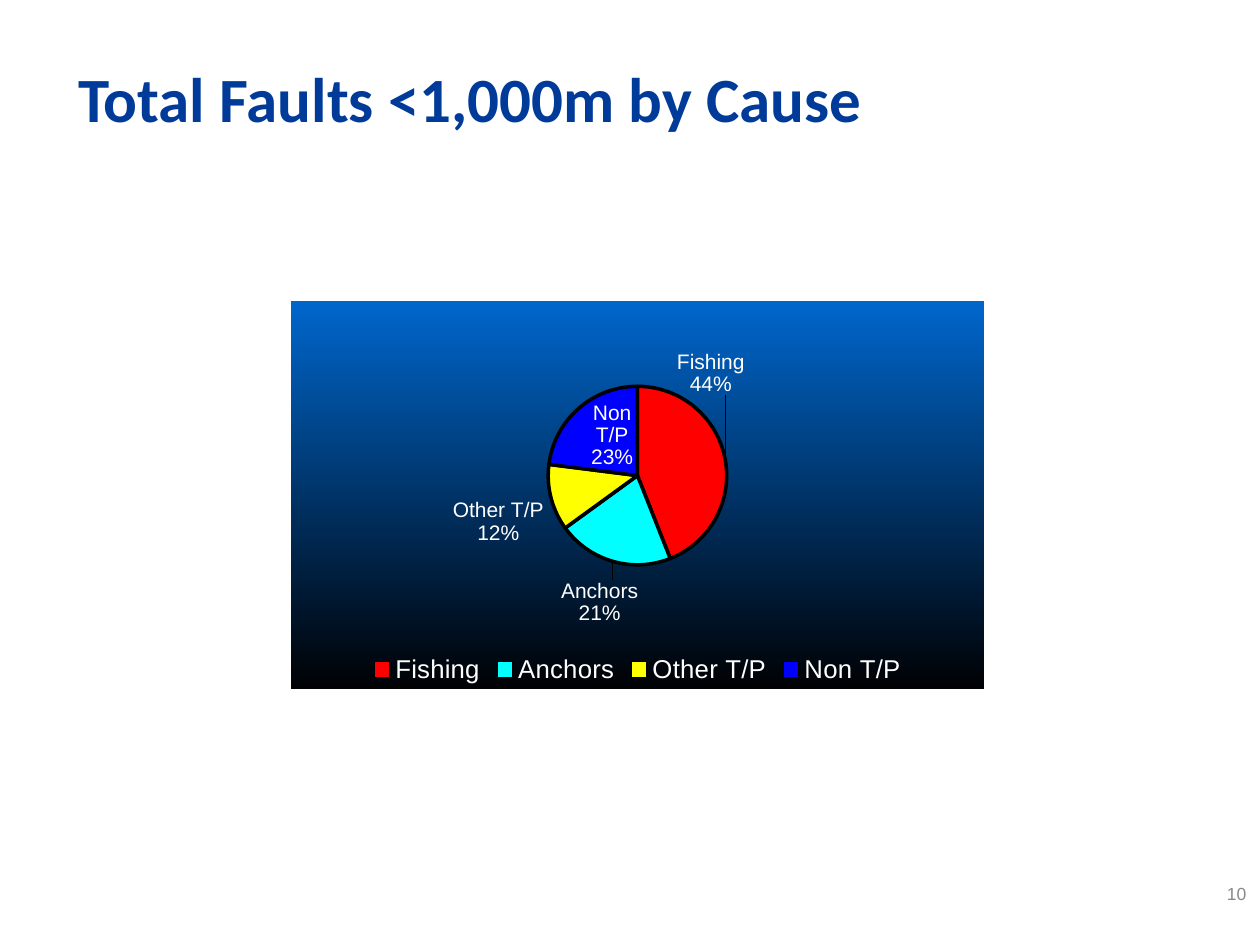
import pptx
import pptx.chart.data
import pptx.dml.color
import pptx.enum.chart
import pptx.enum.text
import pptx.oxml
import pptx.oxml.ns
import pptx.util

Pt = pptx.util.Pt
RGB = pptx.dml.color.RGBColor
LABEL_POS = pptx.enum.chart.XL_LABEL_POSITION
ALIGN = pptx.enum.text.PP_ALIGN
ANCHOR = pptx.enum.text.MSO_ANCHOR
qn = pptx.oxml.ns.qn

TITLE_BLUE = RGB(0x01, 0x3B, 0x99)
NUMBER_GREY = RGB(0x88, 0x89, 0x89)
WHITE = RGB(0xFF, 0xFF, 0xFF)
BLACK = RGB(0, 0, 0)
GRADIENT = (RGB(0x00, 0x66, 0xCC), RGB(0x00, 0x01, 0x03))

TITLE = "Total Faults <1,000m by Cause"
PAGE = "10"
CAUSES = [  # cause, percent, slice colour, label offset as a share of the chart
    ("Fishing", 44, RGB(0xFF, 0, 0), (-0.08, -0.16)),
    ("Anchors", 21, RGB(0, 0xFF, 0xFF), (0.04, 0.03)),
    ("Other T/P", 12, RGB(0xFF, 0xFF, 0), None),
    ("Non T/P", 23, RGB(0, 0, 0xFF), None),
]
PLOT = {"x": 0.18, "y": 0.22, "w": 0.64, "h": 0.46}

NS = pptx.oxml.ns.nsdecls("c", "a")


def format_font(font, size, color, name="Arial", bold=False):
    font.size, font.name, font.bold = Pt(size), name, bold
    font.color.rgb = color


def write(sp, text, size, color, name="Arial", bold=False, align=ALIGN.LEFT, anchor=ANCHOR.TOP):
    tf = sp.text_frame
    tf.word_wrap = True
    tf.auto_size = pptx.enum.text.MSO_AUTO_SIZE.NONE
    tf.vertical_anchor = anchor
    p = tf.paragraphs[0]
    p.alignment = align
    r = p.add_run()
    r.text = text
    format_font(r.font, size, color, name, bold)


def manual_layout(modes="", **shares):
    values = "".join(f'<c:{k} val="{v}"/>' for k, v in shares.items())
    return pptx.oxml.parse_xml(
        f"<c:layout {NS}><c:manualLayout>{modes}{values}</c:manualLayout></c:layout>")


def fill_chart_area(chart):
    stops = "".join(f'<a:gs pos="{pos}"><a:srgbClr val="{color}"/></a:gs>'
                    for pos, color in zip((0, 100000), GRADIENT))
    chart.element.find(qn("c:chart")).addnext(pptx.oxml.parse_xml(
        f'<c:spPr {NS}><a:gradFill><a:gsLst>{stops}</a:gsLst>'
        '<a:lin ang="5400000" scaled="0"/></a:gradFill><a:ln><a:noFill/></a:ln></c:spPr>'))


def place_plot(chart):
    area = chart.element.find(qn("c:chart")).find(qn("c:plotArea"))
    for old in area.findall(qn("c:layout")):
        area.remove(old)
    modes = ('<c:layoutTarget val="inner"/><c:xMode val="edge"/><c:yMode val="edge"/>')
    area.insert(0, manual_layout(modes, **PLOT))


def move_label(series, index, offset):
    label = series.points[index].data_label
    format_font(label.font, 12, WHITE)
    label.position = LABEL_POS.BEST_FIT
    dlbl = series.data_labels._element.findall(qn("c:dLbl"))[-1]
    for tag, val in (("showVal", "0"), ("showCatName", "1"), ("showPercent", "1")):
        dlbl.find(qn(f"c:{tag}")).set("val", val)
    dlbl.find(qn("c:idx")).addnext(manual_layout(x=offset[0], y=offset[1]))


def add_pie(s):
    data = pptx.chart.data.CategoryChartData()
    data.categories = [cause[0] for cause in CAUSES]
    data.add_series("Series 1", [cause[1] for cause in CAUSES])
    chart = s.shapes.add_chart(pptx.enum.chart.XL_CHART_TYPE.PIE,
                               Pt(166.3), Pt(172), Pt(396), Pt(221.8), data).chart
    chart.has_title = False
    format_font(chart.font, 11.5, BLACK, "Times New Roman", True)
    fill_chart_area(chart)
    place_plot(chart)

    chart.has_legend = True
    chart.legend.position = pptx.enum.chart.XL_LEGEND_POSITION.BOTTOM
    chart.legend.include_in_layout = False
    format_font(chart.legend.font, 14.7, WHITE)

    chart.plots[0].vary_by_categories = True
    series = chart.plots[0].series[0]
    labels = series.data_labels
    labels.show_value = False
    labels.show_category_name = labels.show_percentage = True
    labels.number_format, labels.number_format_is_linked = "0%", False
    labels.position = LABEL_POS.BEST_FIT
    format_font(labels.font, 12, WHITE)
    for i, (_, _, color, offset) in enumerate(CAUSES):
        fmt = series.points[i].format
        fmt.fill.solid()
        fmt.fill.fore_color.rgb = color
        fmt.line.color.rgb = BLACK
        fmt.line.width = Pt(2)
        if offset:
            move_label(series, i, offset)


def main():
    prs = pptx.Presentation()
    prs.slide_width, prs.slide_height = Pt(720), Pt(540)
    s = prs.slides.add_slide(prs.slide_layouts[5])
    title = s.shapes.title
    title.left, title.top, title.width, title.height = Pt(37.4), Pt(30.2), Pt(682.6), Pt(71.3)
    write(title, TITLE, 36, TITLE_BLUE, name="Calibri", bold=True)
    add_pie(s)
    number = s.shapes.add_textbox(Pt(551.5), Pt(496), Pt(167.8), Pt(28.8))
    write(number, PAGE, 10, NUMBER_GREY, align=ALIGN.RIGHT, anchor=ANCHOR.MIDDLE)
    prs.save("out.pptx")


if __name__ == "__main__":
    main()
